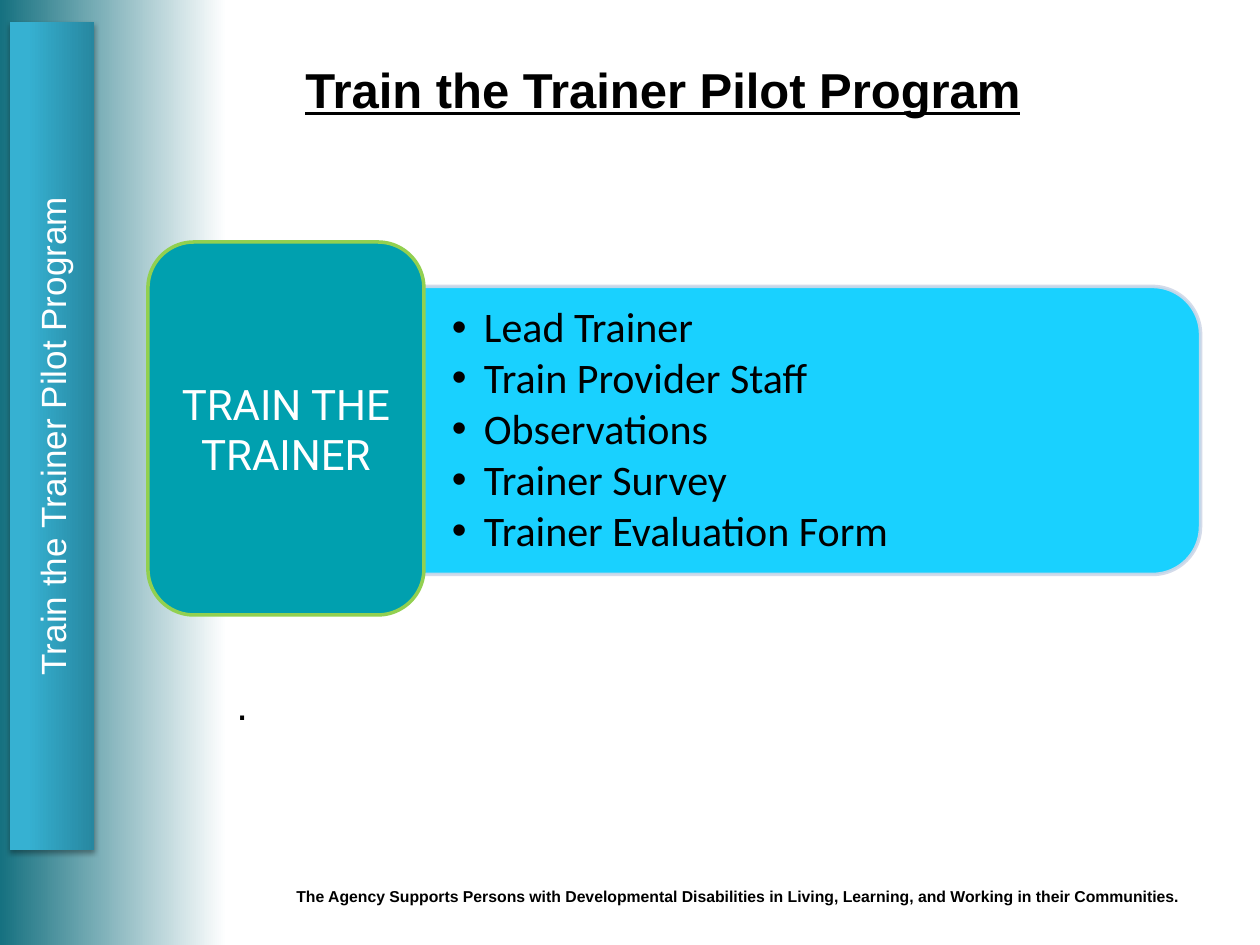
from lxml.etree import SubElement
from pptx import Presentation
from pptx.dml.color import RGBColor
from pptx.enum.shapes import MSO_SHAPE
from pptx.enum.text import MSO_ANCHOR, MSO_AUTO_SIZE, PP_ALIGN
from pptx.oxml.ns import qn
from pptx.util import Pt

EMU_PER_PX = 914400 / 126
PROGRAM = "Train the Trainer Pilot Program"
TOPICS = ["Lead Trainer", "Train Provider Staff", "Observations",
          "Trainer Survey", "Trainer Evaluation Form"]
MOTTO = ("The Agency Supports Persons with Developmental Disabilities in "
         "Living, Learning, and Working in their Communities.")


def px(length):
    """Turn pixels into EMU."""
    return round(length * EMU_PER_PX)


def rgb(value):
    """Turn a hex string into a colour."""
    return RGBColor.from_string(value)


def assign(target, values):
    """Set attributes from a dict of format values."""
    for key, value in values.items():
        setattr(target, key, value)


def place(shape, left, top, width, height, rotation=0):
    """Move, size and turn a shape."""
    assign(shape, {"left": px(left), "top": px(top), "width": px(width),
                   "height": px(height), "rotation": rotation})


def write(shape, lines, color, font, frame=None, paragraph=None, bullet=False):
    """Fill a shape with formatted paragraphs."""
    text_frame = shape.text_frame
    assign(text_frame, {"word_wrap": True, "auto_size": MSO_AUTO_SIZE.NONE, **(frame or {})})
    text_frame.text = "\n".join(lines)
    for line in text_frame.paragraphs:
        if bullet:
            add_bullet(line)
        assign(line, paragraph or {})
        assign(line.font, font)
        line.font.color.rgb = rgb(color)


def add_bullet(line):
    """Give a paragraph a hanging round bullet."""
    props = line._p.get_or_add_pPr()
    props.set("marL", str(px(32)))
    props.set("indent", str(-px(32)))
    SubElement(props, qn("a:buFont"), typeface="Arial")
    SubElement(props, qn("a:buChar"), char="•")


def add_label(slide, box, text, color, font, wrap=True):
    """Add a one-line text box."""
    label = slide.shapes.add_textbox(*map(px, box))
    write(label, [text], color, font, {"word_wrap": wrap})


def add_panel(slide, kind, box, fill, line, rotation=0):
    """Add a filled and outlined panel."""
    panel = slide.shapes.add_shape(kind, 0, 0, 0, 0)
    place(panel, *box, rotation)
    panel.shadow.inherit = False
    panel.fill.solid()
    panel.fill.fore_color.rgb = rgb(fill)
    panel.line.color.rgb = rgb(line)
    panel.line.width = Pt(2)
    return panel


def set_gradient(fill, stops, angle):
    """Apply a two-stop linear gradient."""
    fill.gradient()
    fill.gradient_angle = angle
    for stop, (position, color) in zip(fill.gradient_stops, stops):
        stop.position = position
        stop.color.rgb = rgb(color)


def set_opacity(panel, percent):
    """Make the fill and line of a panel partly see-through."""
    for color in panel._element.spPr.iter(qn("a:srgbClr")):
        SubElement(color, qn("a:alpha"), val=str(percent * 1000))


def add_drop_shadow(shape):
    """Cast a soft shadow below a shape."""
    effects = SubElement(shape._element.spPr, qn("a:effectLst"))
    shadow = SubElement(effects, qn("a:outerShdw"), blurRad="40000", dist="23000",
                        dir="5400000", rotWithShape="0")
    color = SubElement(shadow, qn("a:srgbClr"), val="000000")
    SubElement(color, qn("a:alpha"), val="35000")


def add_side_title(slide):
    """Format the title as an upright bar on the left."""
    title = slide.shapes.title
    place(title, -362, 394, 828, 84, 270)
    set_gradient(title.fill, [(0, "2787A0"), (0.8, "36B1D2")], 90)
    add_drop_shadow(title)
    write(title, [PROGRAM], "FFFFFF", {"name": "Arial", "size": Pt(20)},
          {"vertical_anchor": MSO_ANCHOR.MIDDLE}, {"alignment": PP_ALIGN.CENTER})


def add_topics(slide):
    """Lay the topic list over its rounded panel."""
    panel = add_panel(slide, MSO_SHAPE.ROUND_2_SAME_RECTANGLE,
                      (665, 39, 288, 783), "00CCFF", "D0D8E8", 90)
    set_opacity(panel, 90)
    topics = slide.placeholders[1]
    panel._element.addnext(topics._element)
    place(topics, 418, 301, 769, 260)
    write(topics, TOPICS, "000000", {"name": "Calibri", "size": Pt(24)},
          {"vertical_anchor": MSO_ANCHOR.MIDDLE, "margin_left": px(34),
           "margin_right": px(34), "margin_top": px(18), "margin_bottom": px(18)},
          {"level": 1, "line_spacing": 0.9, "space_before": Pt(0),
           "space_after": Pt(3.2)}, bullet=True)


def add_theme_tile(slide):
    """Add the tile that names the theme."""
    tile = add_panel(slide, MSO_SHAPE.ROUNDED_RECTANGLE,
                     (148, 242, 276, 373), "00A0AF", "92D050")
    write(tile, ["TRAIN THE TRAINER"], "FFFFFF", {"name": "Roboto", "size": Pt(24)},
          {"vertical_anchor": MSO_ANCHOR.MIDDLE}, {"alignment": PP_ALIGN.CENTER})


def main():
    """Build and save the slide."""
    deck = Presentation()
    assign(deck, {"slide_width": px(1260), "slide_height": px(945)})
    slide = deck.slides.add_slide(deck.slide_layouts[1])
    set_gradient(slide.background.fill, [(0, "167180"), (0.18, "FFFFFF")], 0)
    add_label(slide, (284, 881, 914, 32), MOTTO, "000000",
              {"name": "Arial", "size": Pt(9), "bold": True}, wrap=False)
    add_side_title(slide)
    add_topics(slide)
    add_theme_tile(slide)
    add_label(slide, (224, 672, 977, 63), ".", "000000", {"name": "Arial", "size": Pt(24)})
    add_label(slide, (293, 53, 882, 72), PROGRAM, "000000",
              {"name": "Arial", "size": Pt(28), "bold": True, "underline": True})
    deck.save("out.pptx")


if __name__ == "__main__":
    main()
